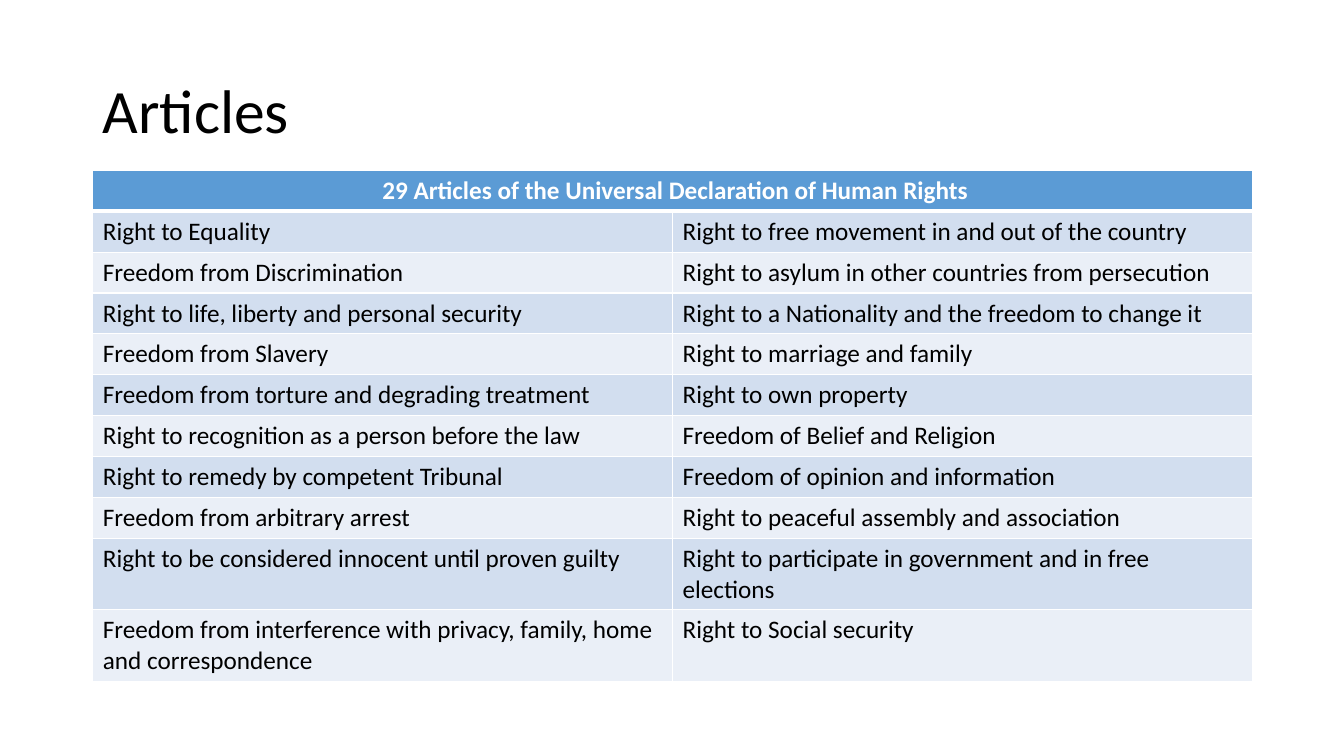
from lxml import etree
from pptx import Presentation
from pptx.dml.color import RGBColor
from pptx.enum.text import MSO_ANCHOR, PP_ALIGN
from pptx.oxml.ns import qn
from pptx.util import Inches, Pt

LEFT, CENTER = PP_ALIGN.LEFT, PP_ALIGN.CENTER
MIDDLE = MSO_ANCHOR.MIDDLE
FONT = "Calibri"
COLORS = {"text": "000000", "white": "FFFFFF", "header": "5B9BD5",
          "odd": "D2DEEF", "even": "EAEFF7"}

HEADING = " 29 Articles of the Universal Declaration of Human Rights"
RIGHTS = [
    ("Right to Equality", "Right to free movement in and out of the country"),
    ("Freedom from Discrimination", "Right to asylum in other countries from persecution"),
    ("Right to life, liberty and personal security",
     "Right to a Nationality and the freedom to change it"),
    ("Freedom from Slavery", "Right to marriage and family"),
    ("Freedom from torture and degrading treatment", "Right to own property"),
    ("Right to recognition as a person before the law", "Freedom of Belief and Religion"),
    ("Right to remedy by competent Tribunal", "Freedom of opinion and information"),
    ("Freedom from arbitrary arrest", "Right to peaceful assembly and association"),
    ("Right to be considered innocent until proven guilty",
     "Right to participate in government and in free elections"),
    ("Freedom from interference with privacy, family, home and correspondence",
     "Right to Social security"),
]


def add_run(paragraph, text, size, color, bold=False):
    run = paragraph.add_run()
    run.text = text
    run.font.name = FONT
    run.font.size = Pt(size)
    run.font.bold = bold
    run.font.color.rgb = RGBColor.from_string(COLORS[color])


def style_cell(cell, fill, top, bottom):
    """Draw the white cell borders, then fill the cell."""
    properties = cell._tc.get_or_add_tcPr()
    for side, width in (("L", 1), ("R", 1), ("T", top), ("B", bottom)):
        line = etree.SubElement(properties, qn(f"a:ln{side}"), w=str(Pt(width)))
        solid = etree.SubElement(line, qn("a:solidFill"))
        etree.SubElement(solid, qn("a:srgbClr"), val=COLORS["white"])
    cell.fill.solid()
    cell.fill.fore_color.rgb = RGBColor.from_string(COLORS[fill])


prs = Presentation()
prs.slide_width, prs.slide_height = Inches(13.33), Inches(7.5)
slide = prs.slides.add_slide(prs.slide_layouts[5])

# Title
title = slide.shapes.title
title.left, title.top = Inches(0.92), Inches(0.4)
title.width, title.height = Inches(11.5), Inches(1.45)
title.text_frame.vertical_anchor = MIDDLE
title_line = title.text_frame.paragraphs[0]
title_line.alignment = LEFT
title_line.line_spacing = 0.9
add_run(title_line, "Articles", 44, "text")

# Table of rights
rights_table = slide.shapes.add_table(
    len(RIGHTS) + 1, 2, Inches(0.92), Inches(1.69), Inches(11.5), Inches(5.05)).table
for row in rights_table.rows:
    row.height = Inches(0.4)
for two_line_row in (9, 10):
    rights_table.rows[two_line_row].height = Inches(0.7)

# Heading across both columns
heading = rights_table.cell(0, 0)
heading.merge(rights_table.cell(0, 1))
for column in range(2):
    style_cell(rights_table.cell(0, column), "header", 1, 3)
heading_line = heading.text_frame.paragraphs[0]
heading_line.alignment = CENTER
add_run(heading_line, HEADING, 18, "white", bold=True)

# Banded rows
for number, pair in enumerate(RIGHTS, start=1):
    band = "odd" if number % 2 else "even"
    for column, right in enumerate(pair):
        cell = rights_table.cell(number, column)
        style_cell(cell, band, 3 if number == 1 else 1, 1)
        add_run(cell.text_frame.paragraphs[0], right, 18, "text")

prs.save("out.pptx")
